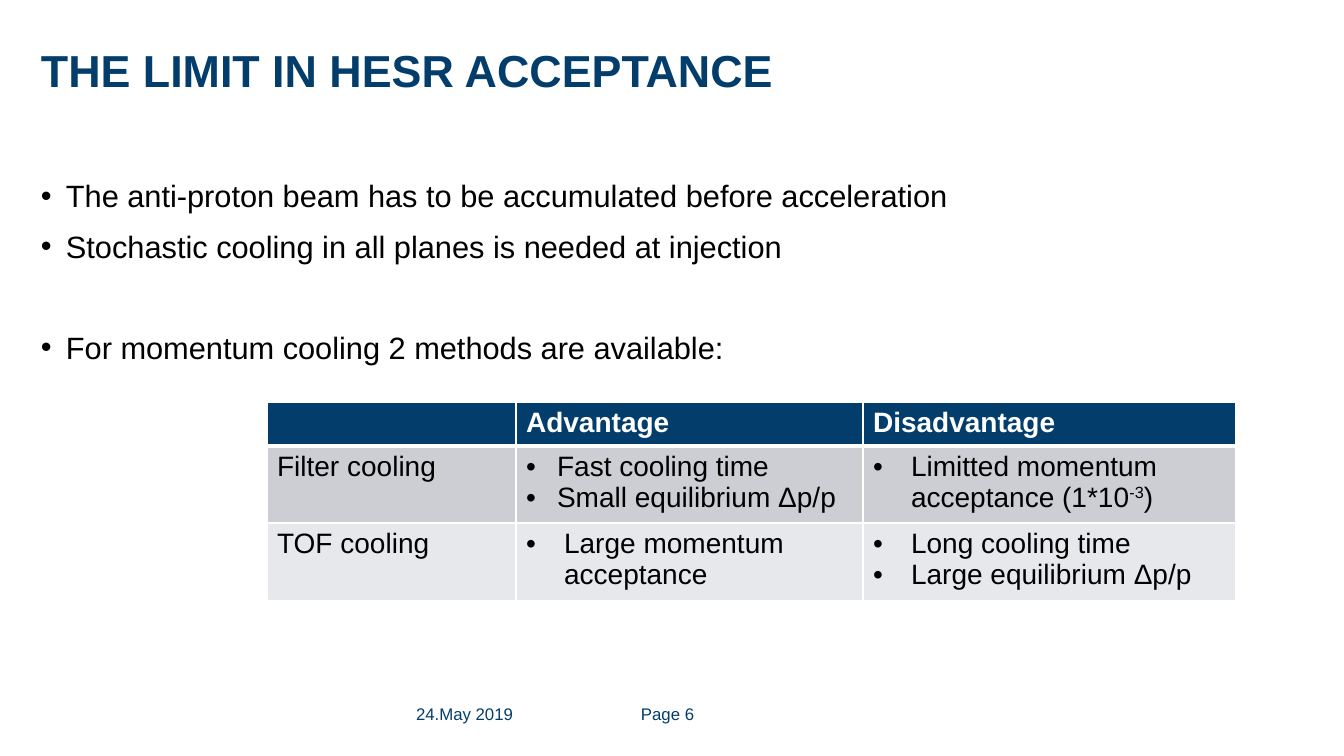
"""Build the slide on the limit in HESR acceptance."""
from dataclasses import dataclass

from lxml import etree
from pptx import Presentation
from pptx.dml.color import RGBColor
from pptx.oxml.ns import qn
from pptx.util import Emu, Pt

TITLE = "THE LIMIT IN HESR ACCEPTANCE"
POINTS = [
    ("The anti-proton beam has to be accumulated before acceleration", 0),
    ("Stochastic cooling in all planes is needed at injection", 0),
    ("For momentum cooling 2 methods are available:", 36),
]
FOOTER = [("24.May 2019", 416, 176), ("Page 6", 641, 80)]
HEADS = ["", "Advantage", "Disadvantage"]
METHODS = [
    ("Filter cooling",
     (31, [["Fast cooling time"], ["Small equilibrium Δp/p"]]),
     (38, [["Limitted momentum acceptance (1*10", "-3", ")"]])),
    ("TOF cooling",
     (38, [["Large momentum acceptance"]]),
     (38, [["Long cooling time"], ["Large equilibrium Δp/p"]])),
]
COLS = [249, 347, 373]
ROWS = [41, 75, 74]


@dataclass(frozen=True)
class Theme:
    face: str = "Arial"
    navy: str = "023D6B"
    black: str = "000000"
    white: str = "FFFFFF"
    bands: tuple = ("CCCED4", "E7E8EB")
    title: int = 32
    body: int = 22
    table: int = 20
    foot: int = 12


THEME = Theme()


def px(n):
    return Emu(round(n * 914400 / 100.8))


def style(para, size, color, bold=False):
    font = para.font
    font.name, font.size, font.bold = THEME.face, Pt(size), bold
    font.color.rgb = RGBColor.from_string(color)


def bullet(para, indent):
    props = para._p.get_or_add_pPr()
    props.set("marL", str(px(indent)))
    props.set("indent", str(-px(indent)))
    etree.SubElement(props, qn("a:buFont"), typeface=THEME.face)
    etree.SubElement(props, qn("a:buChar"), char="•")


def add_box(slide, left, top, width, height):
    frame = slide.shapes.add_textbox(px(left), px(top), px(width), px(height)).text_frame
    frame.word_wrap = True
    frame.margin_left = frame.margin_top = frame.margin_right = frame.margin_bottom = 0
    return frame


def next_para(frame, index):
    return frame.add_paragraph() if index else frame.paragraphs[0]


def paint(cell, fill, row):
    props = cell._tc.get_or_add_tcPr()
    for side in "LRTB":
        thick = (row, side) in ((0, "B"), (1, "T"))
        line = etree.SubElement(props, qn(f"a:ln{side}"), w=str(Pt(3 if thick else 1)))
        solid = etree.SubElement(line, qn("a:solidFill"))
        etree.SubElement(solid, qn("a:srgbClr"), val=THEME.white)
    cell.fill.solid()
    cell.fill.fore_color.rgb = RGBColor.from_string(fill)


def fill_list(frame, indent, items):
    for i, parts in enumerate(items):
        para = next_para(frame, i)
        bullet(para, indent)
        style(para, THEME.table, THEME.black)
        for j, part in enumerate(parts):
            run = para.add_run()
            run.text = part
            if j == 1:
                run._r.get_or_add_rPr().set("baseline", "30000")


def add_methods(slide):
    table = slide.shapes.add_table(
        len(ROWS), len(COLS), px(267), px(402), px(sum(COLS)), px(sum(ROWS))).table
    table.horz_banding = False
    for col, width in zip(table.columns, COLS):
        col.width = px(width)
    for row, height in zip(table.rows, ROWS):
        row.height = px(height)
    for c, head in enumerate(HEADS):
        cell = table.cell(0, c)
        paint(cell, THEME.navy, 0)
        cell.text = head
        style(cell.text_frame.paragraphs[0], THEME.table, THEME.white, True)
    for r, (name, *lists) in enumerate(METHODS, 1):
        cells = [table.cell(r, c) for c in range(len(COLS))]
        for cell in cells:
            paint(cell, THEME.bands[r - 1], r)
        cells[0].text = name
        style(cells[0].text_frame.paragraphs[0], THEME.table, THEME.black)
        for cell, (indent, items) in zip(cells[1:], lists):
            fill_list(cell.text_frame, indent, items)


def main():
    deck = Presentation()
    deck.slide_width, deck.slide_height = px(1344), px(756)
    slide = deck.slides.add_slide(deck.slide_layouts[6])

    para = add_box(slide, 41, 35, 1262, 124).paragraphs[0]
    para.text = TITLE
    para.line_spacing = 1.14
    style(para, THEME.title, THEME.navy, True)

    body = add_box(slide, 41, 172, 1262, 465)
    for i, (text, gap) in enumerate(POINTS):
        para = next_para(body, i)
        para.text = text
        bullet(para, 25)
        para.line_spacing = 1.14
        para.space_after = Pt(6)
        if gap:
            para.space_before = Pt(gap)
        style(para, THEME.body, THEME.black)

    for text, left, width in FOOTER:
        para = add_box(slide, left, 704, width, 24).paragraphs[0]
        para.text = text
        style(para, THEME.foot, THEME.navy)

    add_methods(slide)
    deck.save("out.pptx")


if __name__ == "__main__":
    main()
